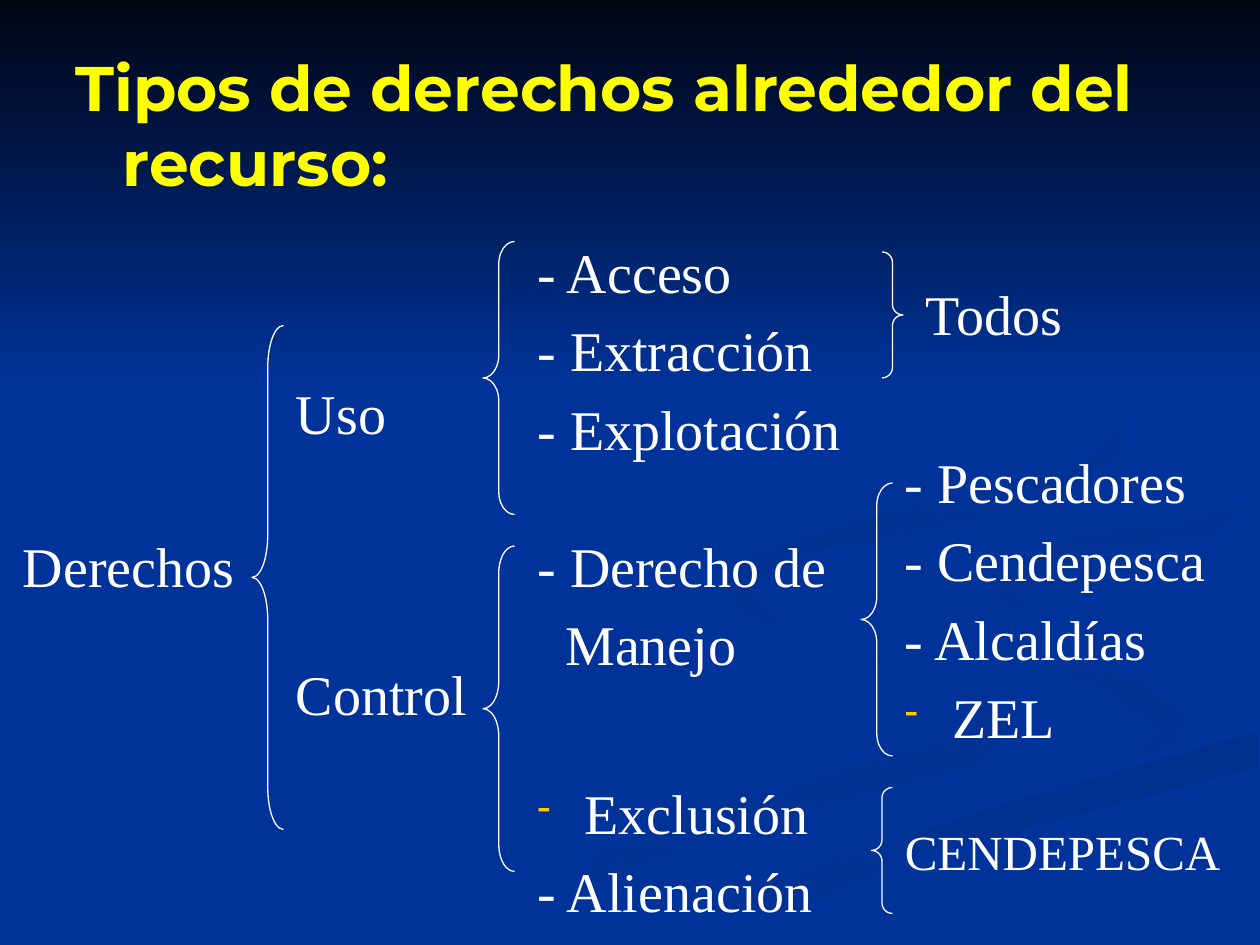
"""Builds a slide that sorts the rights around a resource with braces."""
from lxml.etree import SubElement
from pptx import Presentation
from pptx.dml.color import RGBColor
from pptx.enum.shapes import MSO_SHAPE
from pptx.oxml.ns import qn
from pptx.util import Pt

NAVY = RGBColor(0x00, 0x33, 0x99)
NIGHT = RGBColor(0x00, 0x05, 0x14)
DUSK = RGBColor(0x00, 0x31, 0x93)
DEEP = RGBColor(0x00, 0x2F, 0x8C)
WHITE = RGBColor(0xFF, 0xFF, 0xFF)
YELLOW = RGBColor(0xFF, 0xFF, 0x00)
GOLD = RGBColor(0xFF, 0xCC, 0x00)

WIDE, HIGH = 720, 540
HANG = 27
BODY = {"name": "Times New Roman", "size": Pt(32), "bold": False}
HEAD = {"name": "Montserrat", "size": Pt(36), "bold": True}
SMALL = BODY | {"size": Pt(28)}

WAVES = [
    (NAVY, DUSK, 0, [(562, 398), (442, 357), (414, 330), (422, 351), (541, 391), (562, 417),
                     (388, 467), (216, 539), (260, 539), (406, 479), (562, 436), (576, 418)]),
    (NAVY, DUSK, 45, [(679, 410), (652, 389), (546, 359), (521, 334), (544, 364),
                      (634, 395), (661, 418), (644, 436), (671, 425)]),
    (DEEP, NAVY, 90, [(362, 539), (411, 539), (520, 491), (719, 438), (719, 418),
                      (574, 459), (454, 499)]),
    (DUSK, NAVY, 45, [(562, 331), (570, 344), (595, 357), (580, 340), (632, 316),
                      (719, 302), (719, 289), (611, 307)]),
    (DEEP, NAVY, 45, [(492, 310), (594, 289), (640, 261), (641, 233), (607, 198),
                      (631, 220), (640, 246), (613, 269), (487, 298), (420, 321),
                      (420, 345), (448, 360), (427, 338), (449, 317)]),
    (NIGHT, NAVY, 90, [(0, 0), (0, 222), (WIDE, 222), (WIDE, 0)]),
]

TEXTS = [
    ((36, 24, 648, 66), [("Tipos de derechos alrededor del recurso:",
                          {"style": HEAD, "ink": YELLOW})]),
    ((6, 300, 174, 78), [("Derechos", {})]),
    ((300, 300, 234, 90), [("- Derecho de", {}), ("Manejo", {"left": 16, "first": 0}),
                           ("Exclusión", {"gap": 58, "dash": True}), ("- Alienación", {})]),
    ((300, 132, 270, 78), [("- Acceso", {}), ("- Extracción", {}), ("- Explotación", {})]),
    ((162, 213, 150, 78), [("Uso", {}), ("Control", {"gap": 122})]),
    ((522, 156, 126, 78), [("Todos", {})]),
    ((510, 252, 210, 78), [("- Pescadores", {}), ("- Cendepesca", {}), ("- Alcaldías", {}),
                           ("ZEL", {"dash": True}),
                           ("CENDEPESCA", {"gap": 41, "style": SMALL})]),
]

LEFT, RIGHT = MSO_SHAPE.LEFT_BRACE, MSO_SHAPE.RIGHT_BRACE
BRACES = [
    (LEFT, (144, 186, 18, 288)),
    (LEFT, (276, 138, 18, 156)),
    (LEFT, (276, 312, 18, 186)),
    (LEFT, (492, 276, 18, 156)),
    (LEFT, (498, 450, 12, 72)),
    (RIGHT, (504, 144, 12, 72)),
]


class Board:
    """Holds the style and the current slide."""

    def __init__(self, deck):
        self.slide = deck.slides.add_slide(deck.slide_layouts[6])
        self.shapes = self.slide.shapes
        fill = self.slide.background.fill
        fill.solid()
        fill.fore_color.rgb = NAVY

    def wave(self, start, end, turn, points):
        """Draws one filled outline of the backdrop."""
        pen = self.shapes.build_freeform(*points[0], scale=Pt(1))
        pen.add_line_segments(points[1:], close=True)
        shape = pen.convert_to_shape()
        shape.shadow.inherit = False
        shape.line.fill.background()
        shape.fill.gradient()
        shape.fill.gradient_angle = -turn % 360
        for stop, ink, place in zip(shape.fill.gradient_stops, (start, end), (0, 1)):
            stop.color.rgb, stop.position = ink, place

    def brace(self, kind, box):
        """Draws a brace whose curl is a twelfth of its height."""
        shape = self.shapes.add_shape(kind, *map(Pt, box))
        shape.shadow.inherit = False
        shape.fill.background()
        shape.line.color.rgb, shape.line.width = WHITE, Pt(0.75)
        shape.adjustments[0] = box[3] / box[2] / 12

    def text(self, box, lines):
        """Adds a text box with one paragraph for each line."""
        frame = self.shapes.add_textbox(*map(Pt, box)).text_frame
        frame.word_wrap = True
        for i, (words, form) in enumerate(lines):
            para = frame.add_paragraph() if i else frame.paragraphs[0]
            self.line(para, words, **form)

    def line(self, para, words, style=BODY, ink=WHITE, left=HANG, first=-HANG,
             gap=None, dash=False):
        """Fills and formats one paragraph."""
        run = para.add_run()
        run.text = words
        for key, value in style.items():
            setattr(run.font, key, value)
        run.font.color.rgb = ink
        props = para._p.get_or_add_pPr()
        props.set("marL", str(Pt(left)))
        props.set("indent", str(Pt(first)))
        if gap:
            para.space_before = Pt(gap)
        else:
            space = SubElement(props, qn("a:spcBef"))
            SubElement(space, qn("a:spcPct"), val="20000")
        if dash:
            tint = SubElement(props, qn("a:buClr"))
            SubElement(tint, qn("a:srgbClr"), val=str(GOLD))
            SubElement(props, qn("a:buSzPct"), val="70000")
            SubElement(props, qn("a:buChar"), char="-")
        else:
            SubElement(props, qn("a:buNone"))


def main():
    deck = Presentation()
    deck.slide_width, deck.slide_height = Pt(WIDE), Pt(HIGH)
    board = Board(deck)
    for draw, items in ((board.wave, WAVES), (board.text, TEXTS), (board.brace, BRACES)):
        for item in items:
            draw(*item)
    deck.save("out.pptx")


if __name__ == "__main__":
    main()
